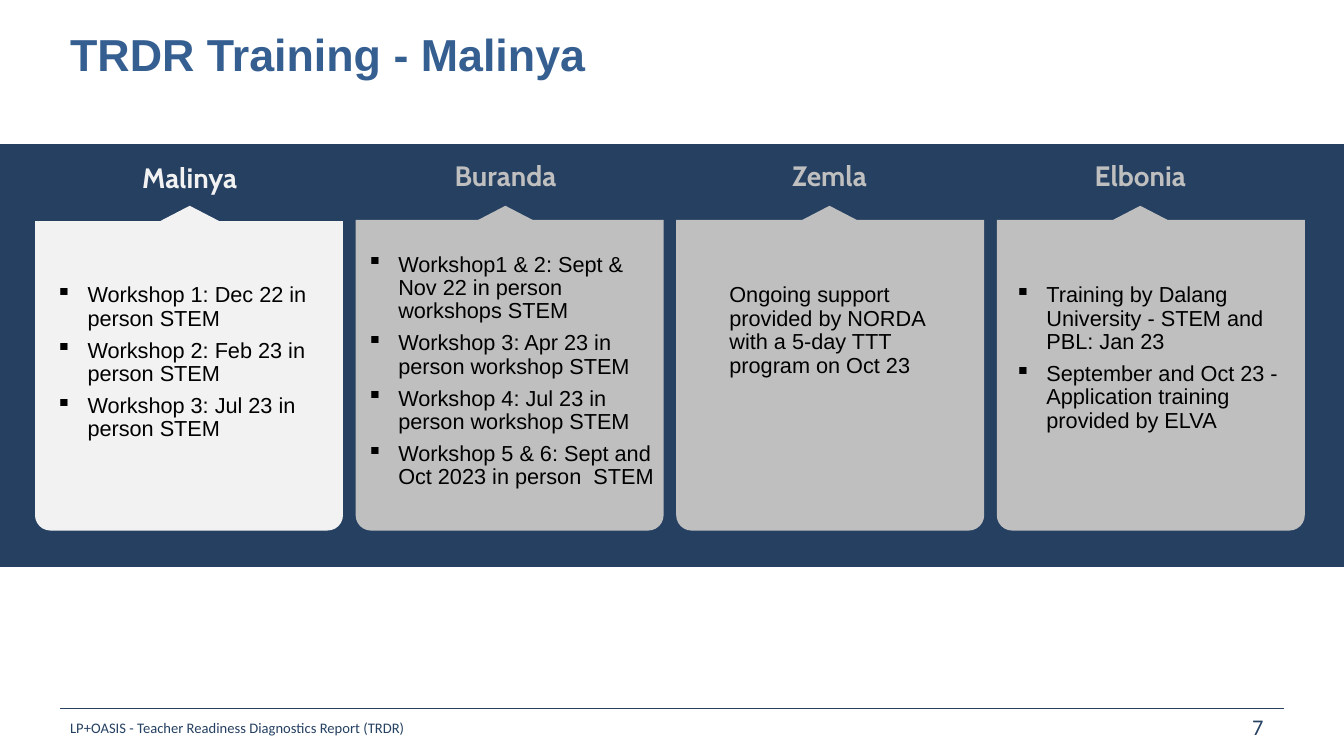
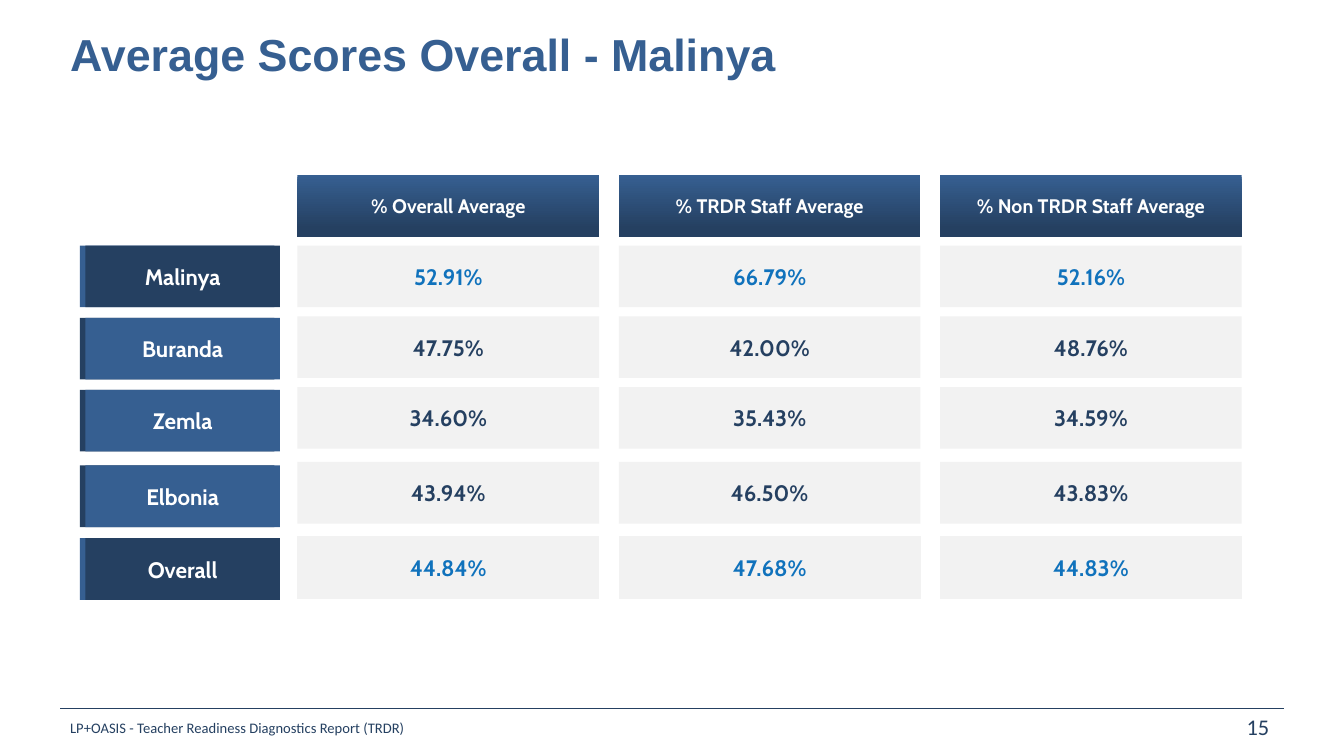
from dataclasses import dataclass

from lxml.etree import SubElement
from pptx import Presentation
from pptx.dml.color import RGBColor
from pptx.enum.shapes import MSO_CONNECTOR, MSO_SHAPE
from pptx.enum.text import MSO_ANCHOR, PP_ALIGN
from pptx.oxml.ns import qn
from pptx.util import Pt


@dataclass(frozen=True)
class Theme:
    navy: str = "254061"
    blue: str = "365F91"
    bright: str = "1072BC"
    gray: str = "BFBFBF"
    pale: str = "F2F2F2"
    white: str = "FFFFFF"
    black: str = "000000"
    body_font: str = "Arial"
    label_font: str = "Cabin"
    footer_font: str = "Calibri"
    title_size: float = 32
    heading_size: float = 20
    footer_size: float = 18
    label_size: float = 16
    body_size: float = 15.5
    header_size: float = 14


THEME = Theme()
FOOTER = "LP+OASIS - Teacher Readiness Diagnostics Report (TRDR)"

# heading, colour, card top, pointer centre, body (left, top, width), bulleted, lines
TRAINING = [
    ("Malinya", THEME.pale, 158, 135.5, (40, 203, 184), True, [
        "Workshop 1: Dec 22 in person STEM",
        "Workshop 2: Feb 23 in person STEM",
        "Workshop 3: Jul 23 in person STEM",
    ]),
    ("Buranda", THEME.gray, 157, 361, (262, 181, 213), True, [
        "Workshop1 & 2: Sept & Nov 22 in person workshops STEM",
        "Workshop 3: Apr 23 in person workshop STEM",
        "Workshop 4: Jul 23 in person workshop STEM",
        "Workshop 5 & 6: Sept and Oct 2023 in person  STEM",
    ]),
    ("Zemla", THEME.gray, 157, 592.5, (521, 203, 168), False, [
        "Ongoing support provided by NORDA with a 5-day TTT program on Oct 23",
    ]),
    ("Elbonia", THEME.gray, 157, 814.5, (725, 203, 196), True, [
        "Training by Dalang University - STEM and PBL: Jan 23",
        "September and Oct 23 - Application training provided by ELVA",
    ]),
]

SCORE_HEADERS = ["% Overall Average", "% TRDR Staff Average", "% Non TRDR Staff Average"]
# label, label top, score top, highlighted, scores
SCORES = [
    ("Malinya", 175.5, 175.5, True, ["52.91%", "66.79%", "52.16%"]),
    ("Buranda", 227, 226, False, ["47.75%", "42.00%", "48.76%"]),
    ("Zemla", 278.5, 276.5, False, ["34.60%", "35.43%", "34.59%"]),
    ("Elbonia", 332.5, 330, False, ["43.94%", "46.50%", "43.83%"]),
    ("Overall", 384.5, 382.5, True, ["44.84%", "47.68%", "44.83%"]),
]


def color(value):
    return RGBColor.from_string(value)


def style(para, size, ink, font, bold=True, align=PP_ALIGN.CENTER):
    para.alignment = align
    for span in para.runs:
        span.font.size = Pt(size)
        span.font.name = font
        span.font.bold = bold
        span.font.color.rgb = color(ink)


def add_box(page, area, fill, preset=MSO_SHAPE.RECTANGLE):
    box = page.shapes.add_shape(preset, *map(Pt, area))
    box.shadow.inherit = False
    box.line.fill.background()
    box.fill.solid()
    box.fill.fore_color.rgb = color(fill)
    return box


def add_label_box(page, area, fill, text, ink, size=THEME.label_size):
    box = add_box(page, area, fill)
    box.text_frame.text = text
    box.text_frame.vertical_anchor = MSO_ANCHOR.MIDDLE
    style(box.text_frame.paragraphs[0], size, ink, THEME.label_font)
    return box


def add_text(page, area, lines, anchor=MSO_ANCHOR.TOP, inset=True):
    box = page.shapes.add_textbox(*map(Pt, area))
    frame = box.text_frame
    frame.word_wrap = True
    frame.vertical_anchor = anchor
    if not inset:
        frame.margin_left = frame.margin_top = frame.margin_right = frame.margin_bottom = 0
    frame.text = "\n".join(lines)
    return frame.paragraphs


def add_bullet(para):
    properties = para._p.get_or_add_pPr()
    properties.set("marL", str(Pt(22.5)))
    properties.set("indent", str(-Pt(22.5)))
    SubElement(properties, qn("a:buChar")).set("char", "▪")


def add_page(deck, title, number):
    """Add a slide with the shared title, footer rule, footer text and page number."""
    page = deck.slides.add_slide(deck.slide_layouts[6])
    rule = page.shapes.add_connector(MSO_CONNECTOR.STRAIGHT, Pt(43), Pt(506), Pt(917), Pt(506))
    rule.line.color.rgb = color(THEME.navy)
    rule.line.width = Pt(0.5)
    SubElement(rule._element.spPr, qn("a:effectLst"))

    para = add_text(page, (43, 20, 868, 47), [title])[0]
    para.line_spacing = 0.9
    para.space_before = Pt(10)
    style(para, THEME.title_size, THEME.blue, THEME.body_font, align=PP_ALIGN.LEFT)

    para = add_text(page, (43, 498, 832, 31), [FOOTER], MSO_ANCHOR.MIDDLE)[0]
    style(para, THEME.footer_size, THEME.navy, THEME.footer_font, False, PP_ALIGN.LEFT)
    para.runs[0]._r.get_or_add_rPr().set("baseline", "-25000")

    para = add_text(page, (880, 506, 37, 27), [str(number)])[0]
    style(para, THEME.label_size, THEME.navy, THEME.footer_font, False)
    return page


def build_training(deck):
    page = add_page(deck, "TRDR Training - Malinya", 7)
    add_box(page, (0, 103, 960, 302), THEME.navy)
    card_left, card_pitch, card_width, card_bottom = 25, 229, 220, 379
    heading_width, pointer_width = 192, 54
    for index, (heading, tint, top, centre, body, bulleted, lines) in enumerate(TRAINING):
        card_area = (card_left + index * card_pitch, top, card_width, card_bottom - top)
        card = add_box(page, card_area, tint, MSO_SHAPE.ROUND_2_SAME_RECTANGLE)
        card.adjustments[0] = 0
        card.adjustments[1] = 0.05
        pointer_area = (centre - pointer_width / 2, 147, pointer_width, 14)
        add_box(page, pointer_area, tint, MSO_SHAPE.ISOSCELES_TRIANGLE)

        heading_area = (centre - heading_width / 2, top - 51, heading_width, 39)
        para = add_text(page, heading_area, [heading], MSO_ANCHOR.MIDDLE, inset=False)[0]
        para.space_before = Pt(6)
        style(para, THEME.heading_size, tint, THEME.label_font)

        left, body_top, width = body
        body_area = (left, body_top, width, card_bottom - body_top)
        for para in add_text(page, body_area, lines, inset=False):
            para.line_spacing = 0.9
            para.space_before = Pt(6)
            style(para, THEME.body_size, THEME.black, THEME.body_font, False, PP_ALIGN.LEFT)
            if bulleted:
                add_bullet(para)


def add_score_table(page, area, text):
    """Add a one-cell table with white borders for an overall score."""
    table = page.shapes.add_table(1, 1, *map(Pt, area)).table
    table.first_row = table.horz_banding = False
    cell = table.cell(0, 0)
    for side, width in (("L", 1), ("R", 1), ("T", 1), ("B", 3)):
        border = SubElement(cell._tc.get_or_add_tcPr(), qn(f"a:ln{side}"), w=str(Pt(width)))
        SubElement(SubElement(border, qn("a:solidFill")), qn("a:srgbClr"), val=THEME.white)
    cell.fill.solid()
    cell.fill.fore_color.rgb = color(THEME.pale)
    cell.vertical_anchor = MSO_ANCHOR.MIDDLE
    cell.text_frame.text = text
    style(cell.text_frame.paragraphs[0], THEME.label_size, THEME.bright, THEME.label_font)


def build_scores(deck):
    page = add_page(deck, "Average Scores Overall - Malinya", 15)
    label_left, label_width, accent_width, row_height = 57, 139, 4, 44
    score_width = 215.5
    score_lefts = [212.5 + column * 229.5 for column in range(len(SCORE_HEADERS))]

    for left, header in zip(score_lefts, SCORE_HEADERS):
        header_area = (left, 125, score_width, row_height)
        box = add_label_box(page, header_area, THEME.navy, header, THEME.white, THEME.header_size)
        box.fill.gradient()
        box.fill.gradient_angle = 270
        stops = zip(box.fill.gradient_stops, ((0, THEME.blue), (0.87, THEME.navy)))
        for stop, (position, tint) in stops:
            stop.position = position
            stop.color.rgb = color(tint)

    for label, label_top, score_top, highlighted, scores in SCORES:
        fill, accent = (THEME.navy, THEME.blue) if highlighted else (THEME.blue, THEME.navy)
        add_box(page, (label_left, label_top, label_width, row_height), accent)
        label_area = (label_left + accent_width, label_top, label_width, row_height)
        add_label_box(page, label_area, fill, label, THEME.white)
        for left, score in zip(score_lefts, scores):
            if label == "Overall":
                add_score_table(page, (left - 0.5, score_top, score_width + 1, 46.5), score)
            else:
                ink = THEME.bright if highlighted else THEME.navy
                score_area = (left, score_top, score_width, row_height)
                add_label_box(page, score_area, THEME.pale, score, ink)


def main():
    deck = Presentation()
    deck.slide_width, deck.slide_height = Pt(960), Pt(540)
    build_training(deck)
    build_scores(deck)
    deck.save("out.pptx")


if __name__ == "__main__":
    main()
